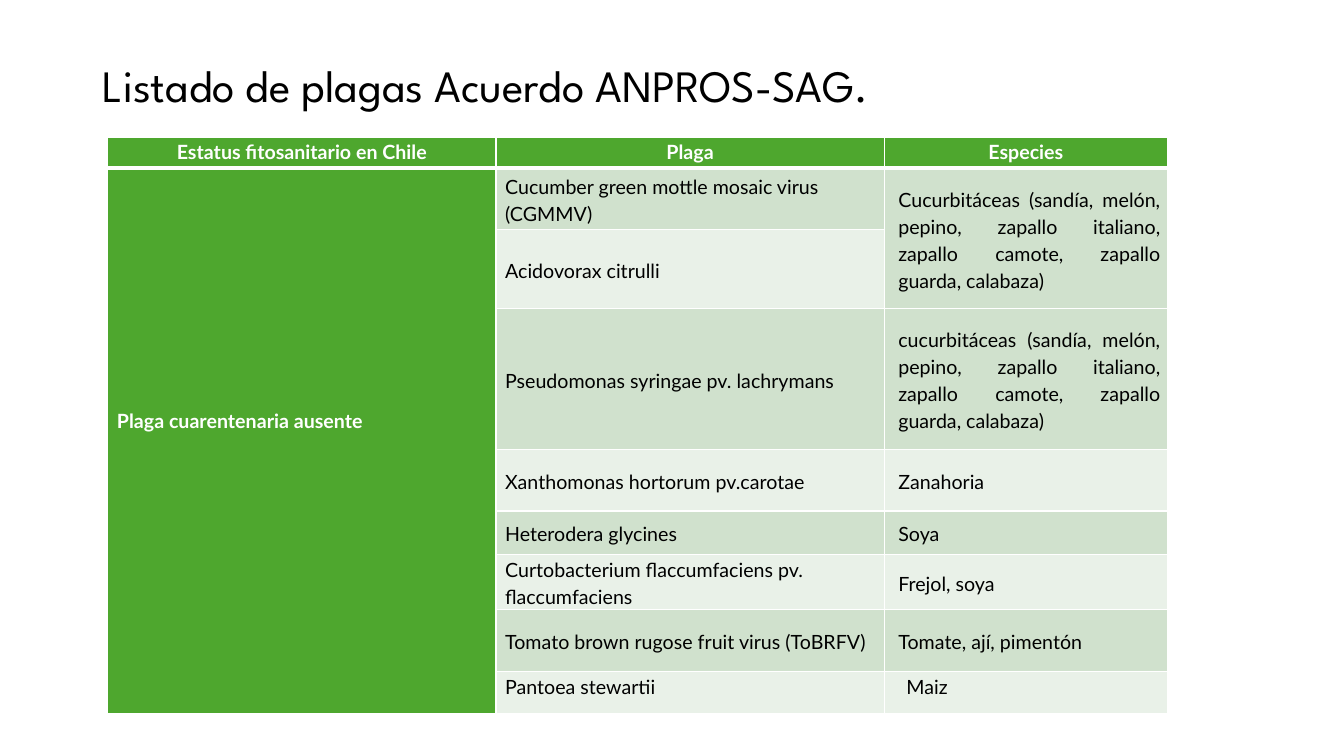
import pptx
import pptx.dml.color
import pptx.enum.text
import pptx.oxml
import pptx.oxml.ns
import pptx.util

Inches = pptx.util.Inches
Pt = pptx.util.Pt
ALIGN = pptx.enum.text.PP_ALIGN
ANCHOR = pptx.enum.text.MSO_ANCHOR


def color(hex_string):
    return pptx.dml.color.RGBColor.from_string(hex_string)


class PestSlide:
    TITLE_FONT, BODY_FONT = "League Spartan", "Lato"
    BLACK, WHITE, GREEN = "000000", "FFFFFF", "4EA72E"
    BANDS = ("D0E1CD", "E9F1E8")

    def __init__(self, presentation):
        self.slide = presentation.slides.add_slide(presentation.slide_layouts[6])

    def text_run(self, paragraph, text, font, size, ink, bold=False):
        run = paragraph.add_run()
        run.text = text
        run.font.name = font
        run.font.size = Pt(size)
        run.font.bold = bold
        run.font.color.rgb = color(ink)

    def title(self, text, left, top, width, height):
        frame = self.slide.shapes.add_textbox(
            Inches(left), Inches(top), Inches(width), Inches(height)).text_frame
        frame.word_wrap = True
        frame.vertical_anchor = ANCHOR.MIDDLE
        frame.margin_bottom = Inches(0.56)
        frame.paragraphs[0].line_spacing = 0.9
        self.text_run(frame.paragraphs[0], text, self.TITLE_FONT, 32, self.BLACK)

    def table(self, left, top, widths, heights):
        table = self.slide.shapes.add_table(
            len(heights), len(widths), Inches(left), Inches(top),
            Inches(sum(widths)), Inches(sum(heights))).table
        table.horz_banding = False
        for column, width in zip(table.columns, widths):
            column.width = Inches(width)
        for row, height in zip(table.rows, heights):
            row.height = Inches(height)
        return table

    def paint(self, cell, fill, bottom_line=1):
        # Borders come before the fill in the cell properties
        properties = cell._tc.get_or_add_tcPr()
        for side, points in zip("LRTB", (1, 1, 1, bottom_line)):
            properties.append(pptx.oxml.parse_xml(
                f'<a:ln{side} {pptx.oxml.ns.nsdecls("a")} w="{Pt(points)}">'
                f'<a:solidFill><a:srgbClr val="{self.WHITE}"/></a:solidFill>'
                f'</a:ln{side}>'))
        cell.fill.solid()
        cell.fill.fore_color.rgb = color(fill)

    def cell_text(self, cell, text, ink, bold=False, align=ALIGN.LEFT,
                  anchor=ANCHOR.MIDDLE, left=0.07, bottom=0):
        cell.margin_left, cell.margin_right = Inches(left), Inches(0.07)
        cell.margin_top, cell.margin_bottom = 0, Inches(bottom)
        cell.vertical_anchor = anchor
        paragraph = cell.text_frame.paragraphs[0]
        paragraph.alignment = align
        paragraph.line_spacing = 1.15
        self.text_run(paragraph, text, self.BODY_FONT, 14, ink, bold)


HEADERS = ("Estatus fitosanitario en Chile", "Plaga", "Especies")
CUCURBITS = ("ucurbitáceas (sandía, melón, pepino, zapallo italiano, "
             "zapallo camote, zapallo guarda, calabaza)")
# Pest, species (None continues the cell above), row height
PESTS = (
    ("Cucumber green mottle mosaic virus (CGMMV)", "C" + CUCURBITS, 0.61),
    ("Acidovorax citrulli", None, 0.78),
    ("Pseudomonas syringae pv. lachrymans", "c" + CUCURBITS, 1.4),
    ("Xanthomonas hortorum pv.carotae", "Zanahoria", 0.61),
    ("Heterodera glycines", "Soya", 0.43),
    ("Curtobacterium flaccumfaciens pv. flaccumfaciens", "Frejol, soya", 0.55),
    ("Tomato brown rugose fruit virus (ToBRFV)", "Tomate, ají, pimentón", 0.61),
    ("Pantoea stewartii", "Maiz", 0.42),
)


def main():
    presentation = pptx.Presentation()
    presentation.slide_width, presentation.slide_height = Inches(13.33), Inches(7.5)
    page = PestSlide(presentation)

    page.title("Listado de plagas Acuerdo ANPROS-SAG.", 0.92, 0.4, 11.5, 1.45)

    table = page.table(1.07, 1.36, (3.85, 3.85, 2.81),
                       [0.31] + [height for _, _, height in PESTS])

    # Header row
    for column, header in enumerate(HEADERS):
        cell = table.cell(0, column)
        page.paint(cell, page.GREEN, bottom_line=3)
        page.cell_text(cell, header, page.WHITE, True, ALIGN.CENTER, ANCHOR.TOP)

    # Pest rows
    for row, (pest, species, _) in enumerate(PESTS, 1):
        status_cell, pest_cell, species_cell = (table.cell(row, c) for c in range(3))
        band = page.BANDS[(row - 1) % 2]
        last = row == len(PESTS)
        anchor = ANCHOR.TOP if last else ANCHOR.MIDDLE
        page.paint(status_cell, page.GREEN)
        page.paint(pest_cell, band)
        page.paint(species_cell, band if species else page.BANDS[0])
        page.cell_text(pest_cell, pest, page.BLACK, anchor=anchor, left=0.09)
        if species:
            page.cell_text(species_cell, species, page.BLACK, align=ALIGN.JUSTIFY,
                           anchor=anchor, left=0.22 if last else 0.14)
        else:
            table.cell(row - 1, 2).merge(species_cell)

    # Status column
    status = table.cell(1, 0)
    status.merge(table.cell(len(PESTS), 0))
    page.cell_text(status, "Plaga cuarentenaria ausente", page.WHITE, True,
                   left=0.09, bottom=0.44)

    presentation.save("out.pptx")


if __name__ == "__main__":
    main()
